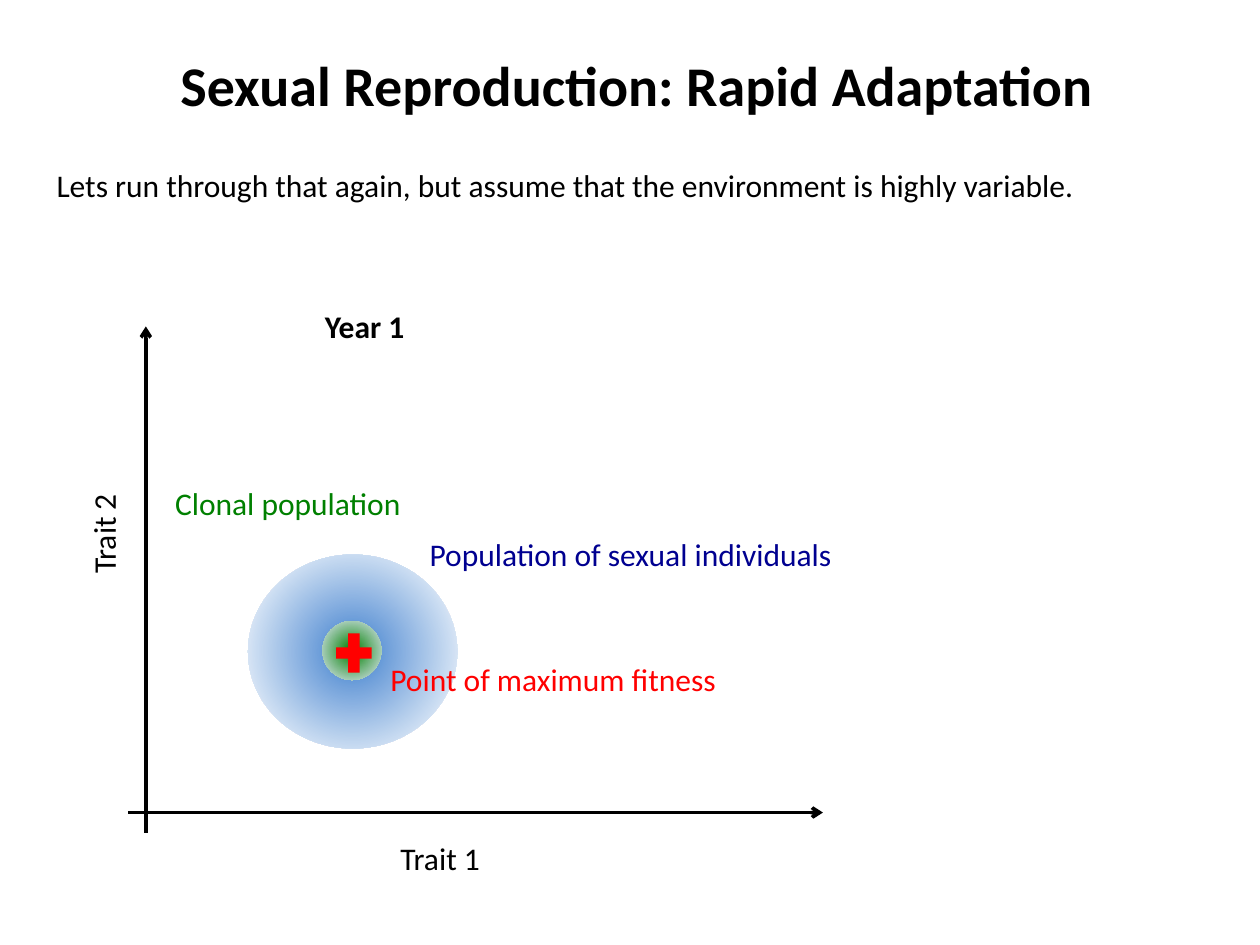
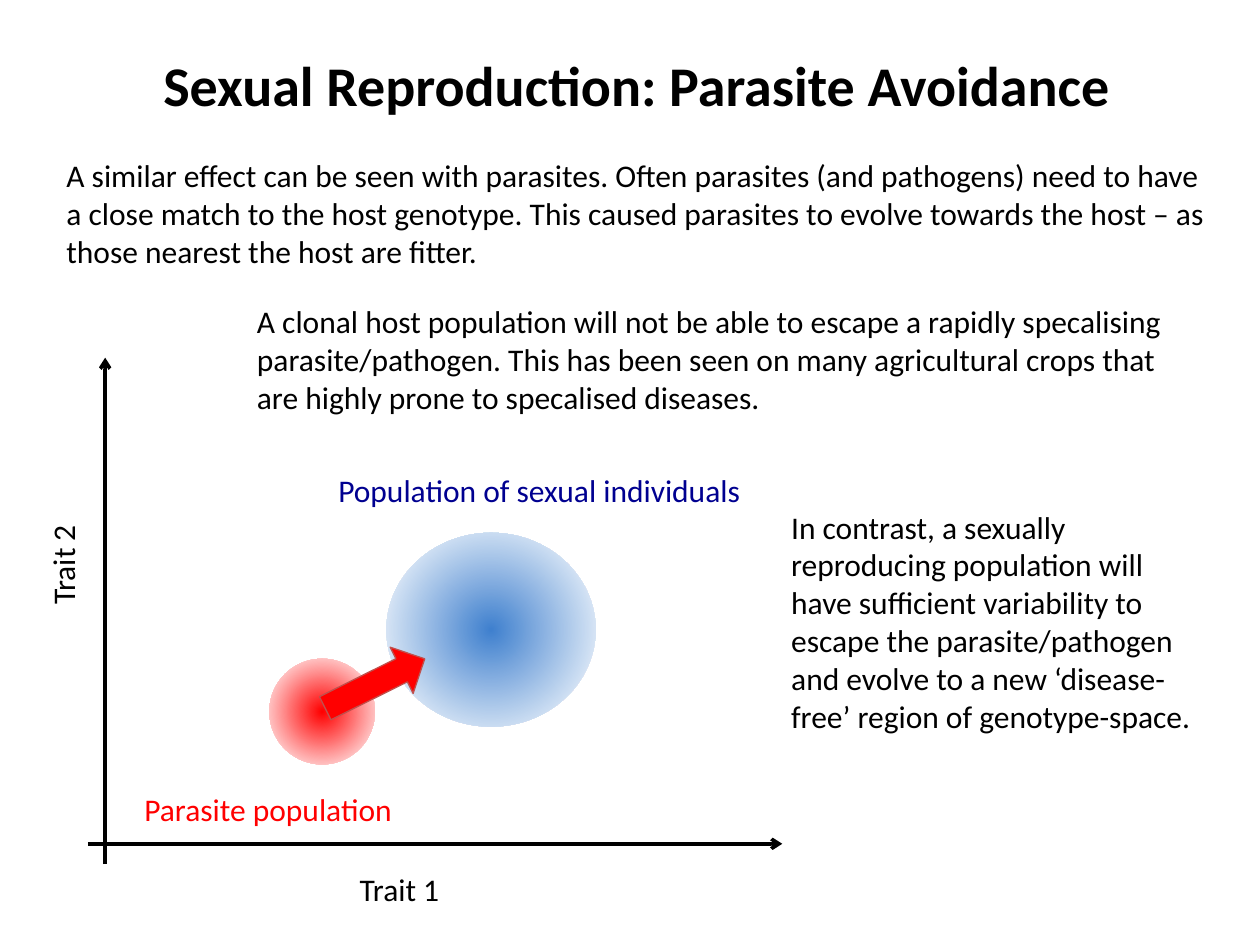
from pptx import Presentation
from pptx.dml.color import RGBColor
from pptx.enum.shapes import MSO_CONNECTOR as Connector, MSO_SHAPE as Preset
from pptx.enum.text import MSO_ANCHOR as Anchor, MSO_AUTO_SIZE as AutoSize, PP_ALIGN as Align
from pptx.oxml.ns import qn
from pptx.util import Cm, Pt
from lxml.etree import SubElement

COLORS = {
    "black": "000000",
    "white": "FFFFFF",
    "red": "FF0000",
    "green": "008000",
    "navy": "000090",
    "blue": "3F80CE",
    "pale": "DCE6F2",
    "brick": "C0504D",
}
TITLE_BOX = (2.59, 0.89, 20.5, 1.63)
SEXUAL_SIZE = (4.22, 3.91)
SEXUAL_LABEL = "Population of sexual individuals"
LABEL_HEIGHT = 1.02


def rgb(name):
    return RGBColor.from_string(COLORS[name])


def apply_format(target, values):
    for name, value in values.items():
        setattr(target, name, value)


def set_font(paragraph, size=18, color="black", bold=False):
    apply_format(paragraph.font, {"name": "Calibri", "size": Pt(size), "bold": bold})
    paragraph.font.color.rgb = rgb(color)


def add_title(slide, text):
    title = slide.shapes.title
    left, top, width, height = map(Cm, TITLE_BOX)
    apply_format(title, {"left": left, "top": top, "width": width, "height": height})
    frame = title.text_frame
    frame.text = text
    apply_format(frame, {"auto_size": AutoSize.NONE, "vertical_anchor": Anchor.TOP})
    paragraph = frame.paragraphs[0]
    paragraph.alignment = Align.CENTER
    set_font(paragraph, size=32, bold=True)


def add_text(slide, box, text, wrap=True, rotation=0, **font):
    shape = slide.shapes.add_textbox(*map(Cm, box))
    shape.rotation = rotation
    frame = shape.text_frame
    frame.text = text
    apply_format(frame, {"word_wrap": wrap, "auto_size": AutoSize.SHAPE_TO_FIT_TEXT})
    set_font(frame.paragraphs[0], **font)


def add_label(slide, origin, offset, width, text, **options):
    left, top = origin[0] + offset[0], origin[1] + offset[1]
    add_text(slide, (left, top, width, LABEL_HEIGHT), text, wrap=False, **options)


def add_axis(slide, start, end):
    axis = slide.shapes.add_connector(Connector.STRAIGHT, *map(Cm, start + end))
    axis.line.width = Pt(2)
    axis.line.color.rgb = rgb("black")
    properties = axis._element.spPr
    SubElement(properties.find(qn("a:ln")), qn("a:tailEnd"), type="arrow")
    SubElement(properties, qn("a:effectLst"))


def add_axes(slide, origin):
    left, top = origin
    axis_x, axis_y = left + 0.35, top + 9.8
    add_axis(slide, (axis_x, top + 10.21), (axis_x, top))
    add_axis(slide, (left, axis_y), (left + 14, axis_y))
    add_label(slide, origin, (5.23, 10.21), 2.13, "Trait 1")
    add_label(slide, origin, (-1.57, 3.66), 2.13, "Trait 2", rotation=270)


def add_preset(slide, preset, origin, offset, size):
    left, top = origin[0] + offset[0], origin[1] + offset[1]
    shape = slide.shapes.add_shape(preset, *map(Cm, (left, top, *size)))
    shape.shadow.inherit = False
    shape.line.fill.background()
    return shape


def add_solid(slide, preset, origin, offset, size, color):
    shape = add_preset(slide, preset, origin, offset, size)
    shape.fill.solid()
    shape.fill.fore_color.rgb = rgb(color)
    return shape


def add_population(slide, origin, offset, size, center, edge="white"):
    shape = add_preset(slide, Preset.OVAL, origin, offset, size)
    shape.fill.gradient()
    for stop, color, position in zip(shape.fill.gradient_stops, (center, edge), (0, 0.94)):
        stop.color.rgb = rgb(color)
        stop.position = position
    gradient = shape._element.spPr.find(qn("a:gradFill"))
    gradient.remove(gradient.find(qn("a:lin")))
    radial = SubElement(gradient, qn("a:path"), path="circle")
    SubElement(radial, qn("a:fillToRect"), dict.fromkeys("ltrb", "50000"))


def draw_adaptation(slide, origin):
    add_axes(slide, origin)
    add_population(slide, origin, (2.41, 4.6), SEXUAL_SIZE, "blue")
    add_population(slide, origin, (3.91, 5.94), (1.19, 1.19), "green", "pale")
    add_solid(slide, Preset.MATH_PLUS, origin, (4.06, 6.05), (0.97, 1.07), "red")
    add_label(slide, origin, (5.03, 6.6), 7.14, "Point of maximum fitness", color="red")
    add_label(slide, origin, (5.82, 4.09), 8.71, SEXUAL_LABEL, color="navy")
    add_label(slide, origin, (0.69, 3.05), 5.11, "Clonal population", color="green")
    add_label(slide, origin, (3.71, -0.51), 2.13, "Year 1", bold=True)


def draw_avoidance(slide, origin):
    add_axes(slide, origin)
    add_population(slide, origin, (6.02, 3.53), SEXUAL_SIZE, "blue")
    add_population(slide, origin, (3.66, 6.07), (2.13, 2.13), "red")
    add_label(slide, origin, (4.8, 2.16), 8.71, SEXUAL_LABEL, color="navy")
    add_label(slide, origin, (0.89, 8.59), 5.56, "Parasite population", color="red")
    arrow = add_solid(slide, Preset.RIGHT_ARROW, origin, (4.67, 6.05), (2.24, 1.04), "red")
    arrow.rotation = 333.6
    arrow.line.color.rgb = rgb("brick")
    arrow.line.width = Pt(0.75)


def add_slide(presentation, title, draw_diagram, origin, passages):
    slide = presentation.slides.add_slide(presentation.slide_layouts[5])
    add_title(slide, title)
    draw_diagram(slide, origin)
    for box, text in passages:
        add_text(slide, box, text)


ADAPTATION_PASSAGES = [
    ((0.89, 3.23, 23.22, 1.02),
     "Lets run through that again, but assume that the environment is highly variable."),
]
AVOIDANCE_PASSAGES = [
    ((1.09, 3.02, 23.55, 2.57),
     "A similar effect can be seen with parasites. Often parasites (and pathogens) need to "
     "have a close match to the host genotype. This caused parasites to evolve towards the "
     "host – as those nearest the host are fitter."),
    ((4.93, 5.97, 19.23, 2.57),
     "A clonal host population will not be able to escape a rapidly specalising "
     "parasite/pathogen. This has been seen on many agricultural crops that are highly "
     "prone to specalised diseases."),
    ((15.7, 10.11, 8.92, 4.88),
     "In contrast, a sexually reproducing population will have sufficient variability to "
     "escape the parasite/pathogen and evolve to a new ‘disease-free’ region of "
     "genotype-space."),
]


def main():
    presentation = Presentation()
    apply_format(presentation, {"slide_width": Cm(25.4), "slide_height": Cm(19.05)})
    add_slide(presentation, "Sexual Reproduction: Rapid Adaptation",
              draw_adaptation, (2.59, 6.58), ADAPTATION_PASSAGES)
    add_slide(presentation, "Sexual Reproduction: Parasite Avoidance",
              draw_avoidance, (1.77, 7.21), AVOIDANCE_PASSAGES)
    presentation.save("out.pptx")


if __name__ == "__main__":
    main()
